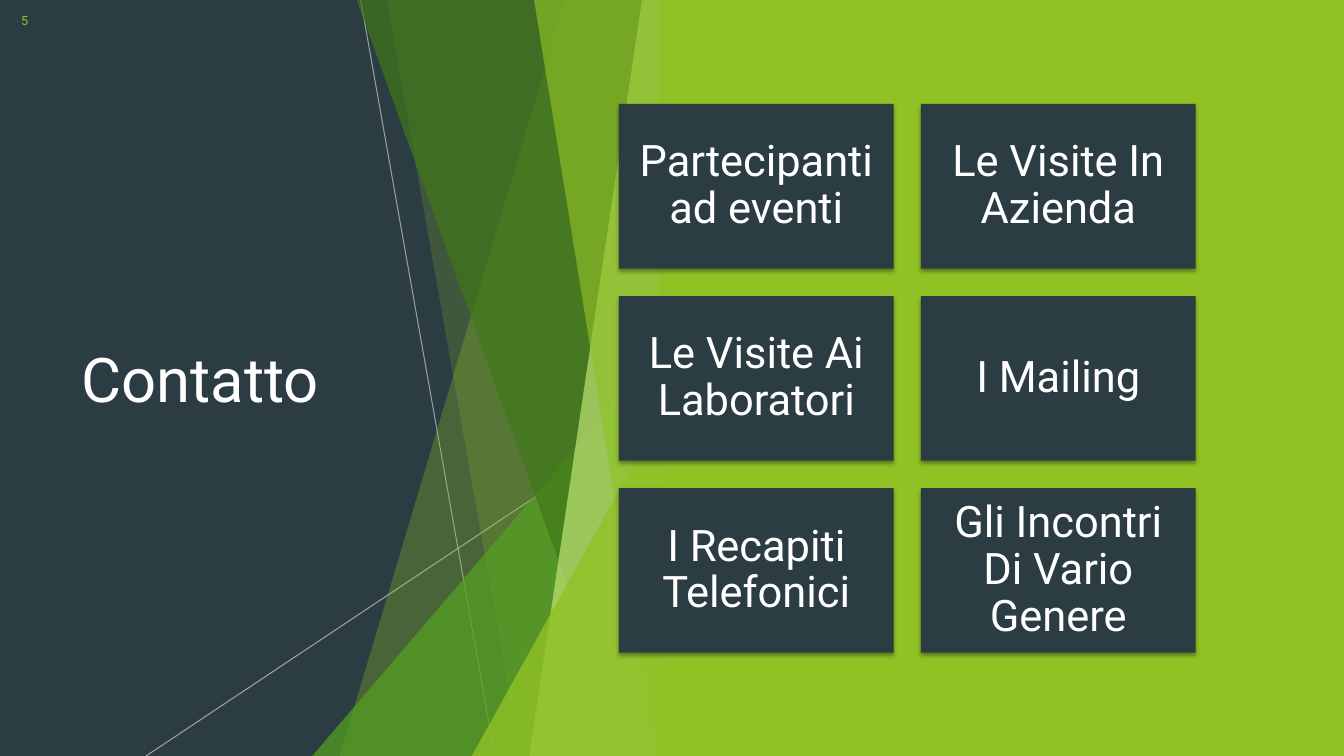
import lxml.etree
import pptx
import pptx.dml.color
import pptx.enum.shapes
import pptx.enum.text
import pptx.oxml.ns
import pptx.util

Cm = pptx.util.Cm
qn = pptx.oxml.ns.qn
SHAPES = pptx.enum.shapes.MSO_SHAPE
ALIGN = pptx.enum.text.PP_ALIGN

WIDTH, HEIGHT = 33.87, 19.05
COLORS = {
    "night": "2C3C43",
    "lime": "90C226",
    "leaf": "54A021",
    "forest": "3F7819",
    "pale": "C0E474",
    "silver": "BFBFBF",
    "white": "FFFFFF",
    "black": "000000",
}
CONTACTS = [
    "Partecipanti ad eventi", "Le Visite In Azienda",
    "Le Visite Ai Laboratori", "I Mailing",
    "I Recapiti Telefonici", "Gli Incontri Di Vario Genere",
]
RAYS = [
    (5.41, 0, 8.79, 19.05, 75),
    (13.24, 10.24, 0, 19.05, 80),
]
SHARDS = [
    ("slant", 10.57, 4.88, "lime", 30),
    ("slant", 6.07, 9.43, "lime", 20),
    ("triangle", 8.46, 4.19, "leaf", 72),
    ("slant", 5.31, 12.17, "forest", 70),
    ("slant", 12.5, 9.66, "pale", 70),
    ("slant", 9.78, 12.86, "lime", 65),
    ("triangle", 9.98, 8.21, "lime", 80),
]


def rgb(name):
    return pptx.dml.color.RGBColor.from_string(COLORS[name])


def set_opacity(shape, percent):
    for color in shape._element.spPr.iter(qn("a:srgbClr")):
        lxml.etree.SubElement(color, qn("a:alpha"), val=str(percent * 1000))


def paint(shape, color, opacity=100):
    shape.shadow.inherit = False
    shape.fill.solid()
    shape.fill.fore_color.rgb = rgb(color)
    shape.line.fill.background()
    if opacity < 100:
        set_opacity(shape, opacity)


def add_soft_shadow(shape):
    effects = shape._element.spPr.find(qn("a:effectLst"))
    shadow = lxml.etree.SubElement(
        effects, qn("a:outerShdw"), blurRad=str(pptx.util.Pt(3)),
        dist=str(pptx.util.Pt(2)), dir="5400000", rotWithShape="0")
    color = lxml.etree.SubElement(shadow, qn("a:srgbClr"), val=COLORS["black"])
    lxml.etree.SubElement(color, qn("a:alpha"), val="35000")


def write(shape, text, size, color="white", align=ALIGN.LEFT, spacing=1.0, inset=0.25):
    frame = shape.text_frame
    frame.word_wrap = True
    frame.auto_size = pptx.enum.text.MSO_AUTO_SIZE.NONE
    frame.vertical_anchor = pptx.enum.text.MSO_ANCHOR.MIDDLE
    frame.margin_left = frame.margin_right = Cm(inset)
    frame.margin_top = frame.margin_bottom = Cm(inset)
    para = frame.paragraphs[0]
    para.alignment = align
    para.line_spacing = spacing
    span = para.add_run()
    span.text = text
    span.font.name = "Roboto"
    span.font.size = pptx.util.Pt(size)
    span.font.color.rgb = rgb(color)


def add_ray(slide, x1, y1, x2, y2, opacity):
    ray = slide.shapes.add_connector(
        pptx.enum.shapes.MSO_CONNECTOR.STRAIGHT, Cm(x1), Cm(y1), Cm(x2), Cm(y2))
    ray.line.color.rgb = rgb("silver")
    ray.line.width = pptx.util.Pt(0.75)
    set_opacity(ray, opacity)
    lxml.etree.SubElement(ray._element.spPr, qn("a:effectLst"))


def add_slant(slide, top_left, bottom_left, right, top, bottom):
    builder = slide.shapes.build_freeform(Cm(top_left), Cm(top), scale=1.0)
    builder.add_line_segments([
        (Cm(right), Cm(top)), (Cm(right), Cm(bottom)), (Cm(bottom_left), Cm(bottom))])
    return builder.convert_to_shape()


def add_triangle(slide, left, top, right, bottom):
    triangle = slide.shapes.add_shape(
        SHAPES.ISOSCELES_TRIANGLE, Cm(left), Cm(top), Cm(right - left), Cm(bottom - top))
    triangle.adjustments[0] = 1
    return triangle


def add_facets(slide, left, top, width, height):
    right, bottom = left + width, top + height
    for x1, y1, x2, y2, opacity in RAYS:
        add_ray(slide, left + x1, top + y1, left + x2, top + y2, opacity)
    for kind, start, foot, color, opacity in SHARDS:
        if kind == "slant":
            shard = add_slant(slide, left + start, left + foot, right, top, bottom)
        else:
            shard = add_triangle(slide, left + foot, top + start, right, bottom)
        paint(shard, color, opacity)


def add_panel(slide, left, top, width, height):
    panel = slide.shapes.add_shape(
        SHAPES.RECTANGLE, Cm(left), Cm(top), Cm(width), Cm(height))
    paint(panel, "lime")


def place_title(slide, left, top, width, height):
    title = slide.shapes.title
    title.left, title.top = Cm(left), Cm(top)
    title.width, title.height = Cm(width), Cm(height)
    write(title, "Contatto", 44)
    slide.shapes._spTree.append(title._element)


def add_cards(slide, left, top, width, height, columns=2, gap=0.69):
    rows = len(CONTACTS) // columns
    card_width = (width - gap * (columns - 1)) / columns
    card_height = (height - gap * (rows - 1)) / rows
    for index, contact in enumerate(CONTACTS):
        row, column = divmod(index, columns)
        card = slide.shapes.add_shape(
            SHAPES.RECTANGLE,
            Cm(left + column * (card_width + gap)), Cm(top + row * (card_height + gap)),
            Cm(card_width), Cm(card_height))
        paint(card, "night")
        add_soft_shadow(card)
        write(card, contact, 31, align=ALIGN.CENTER, spacing=0.9, inset=0.33)


def add_page_number(slide, left, top, width, height):
    box = slide.shapes.add_textbox(Cm(left), Cm(top), Cm(width), Cm(height))
    write(box, "5", 9, color="lime", align=ALIGN.RIGHT)


def main():
    deck = pptx.Presentation()
    deck.slide_width, deck.slide_height = Cm(WIDTH), Cm(HEIGHT)
    slide = deck.slides.add_slide(deck.slide_layouts[5])
    slide.background.fill.solid()
    slide.background.fill.fore_color.rgb = rgb("night")
    add_facets(slide, 3.68, 0, 13.24, HEIGHT)
    add_panel(slide, 16.6, 0, WIDTH - 16.6, HEIGHT)
    place_title(slide, 1.8, 3.84, 9.86, 11.38)
    add_cards(slide, 15.6, 2.62, 14.53, 13.83)
    add_page_number(slide, 0, 0, 0.96, 1.02)
    deck.save("out.pptx")


if __name__ == "__main__":
    main()
